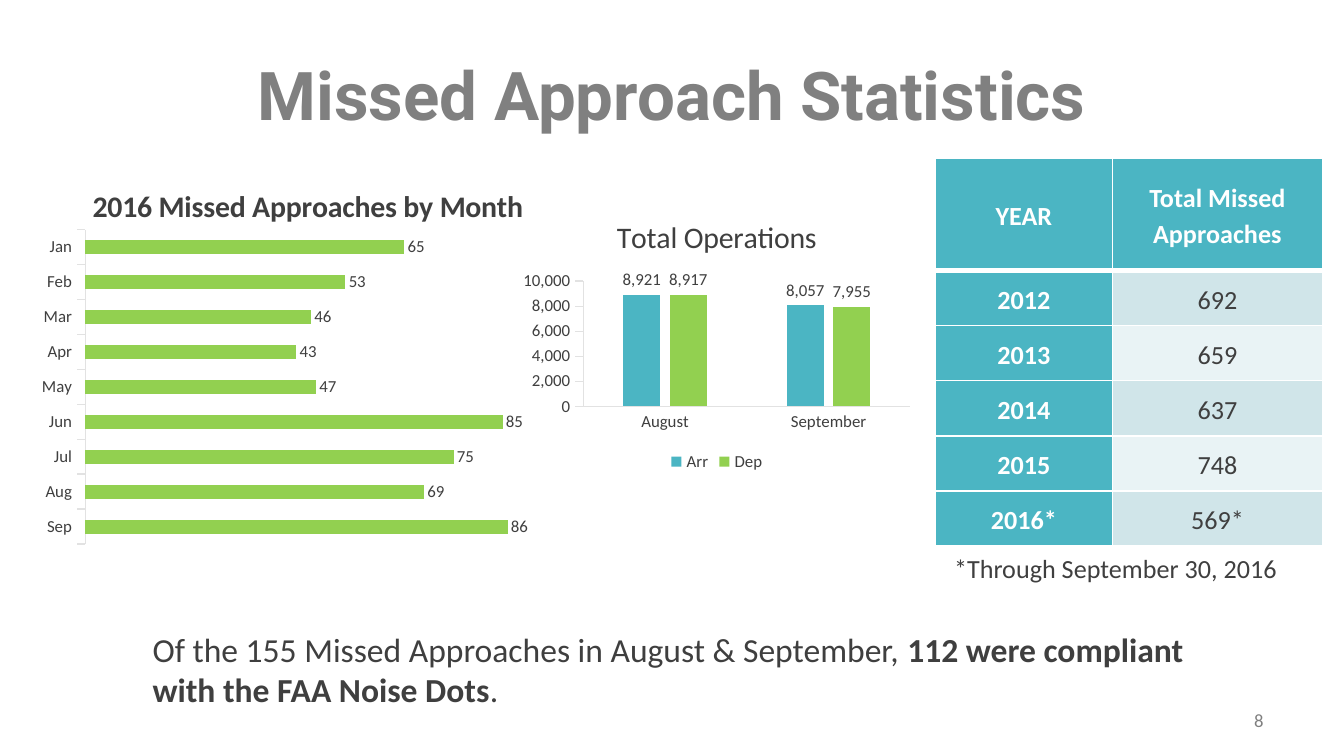
from lxml import etree
from pptx import Presentation
from pptx.chart.data import CategoryChartData
from pptx.dml.color import RGBColor
from pptx.enum import chart as ch, text as tx
from pptx.oxml import parse_xml
from pptx.oxml.ns import nsdecls, qn
from pptx.util import Pt

HUES = {
    "title": "808080", "text": "3F3F3F", "white": "FFFFFF", "teal": "4BB5C3",
    "green": "92D050", "band": "D0E5E9", "pale": "E9F3F5", "axis": "E2E2E2",
}
MONTHS = ["Sep", "Aug", "Jul", "Jun", "May", "Apr", "Mar", "Feb", "Jan"]
MISSED = [86, 69, 75, 85, 47, 43, 46, 53, 65]
TOTALS = [
    ("YEAR", "Total Missed Approaches"), ("2012", "692"), ("2013", "659"),
    ("2014", "637"), ("2015", "748"), ("2016*", "569*"),
]


def hue(name):
    return RGBColor.from_string(HUES[name])


def style(font, size, color="text", bold=False, face="Calibri"):
    font.size, font.bold, font.name = Pt(size), bold, face
    font.color.rgb = hue(color)


def place(shape, box):
    shape.left, shape.top, shape.width, shape.height = map(Pt, box)


def add_title(slide, words):
    title = slide.shapes.title
    place(title, (0, 16.5, 720, 67.5))
    frame = title.text_frame
    frame.text = words
    frame.vertical_anchor = tx.MSO_ANCHOR.MIDDLE
    para = frame.paragraphs[0]
    para.alignment = tx.PP_ALIGN.CENTER
    style(para.runs[0].font, 36, "title", True, "Roboto")


def add_note(slide, box, parts, size, color="text", align=tx.PP_ALIGN.LEFT):
    """Add a text box; parts are (words, bold) pairs of one paragraph."""
    frame = slide.shapes.add_textbox(*map(Pt, box)).text_frame
    frame.word_wrap = True
    para = frame.paragraphs[0]
    para.alignment = align
    for words, bold in parts:
        run = para.add_run()
        run.text = words
        style(run.font, size, color, bold)
    return frame


def set_layout(parent, spot, **values):
    """Give a chart part a manual layout as its child number spot."""
    for old in parent.findall(qn("c:layout")):
        parent.remove(old)
    layout = parse_xml(f"<c:layout {nsdecls('c')}><c:manualLayout/></c:layout>")
    for tag, value in values.items():
        etree.SubElement(layout[0], qn("c:" + tag), val=str(value))
    parent.insert(spot, layout)


def add_bars(slide, kind, box, title, bold, cats, series, gap, overlap):
    """Add a bar chart; series are (name, values, color) rows."""
    data = CategoryChartData(number_format="#,##0")
    data.categories = cats
    for name, values, _ in series:
        data.add_series(name, values)
    chart = slide.shapes.add_chart(kind, *map(Pt, box), data).chart
    style(chart.font, 9)
    chart.has_legend = False
    chart.has_title = True
    chart.chart_title.include_in_layout = False
    frame = chart.chart_title.text_frame
    frame.text = title
    style(frame.paragraphs[0].runs[0].font, 16, bold=bold)
    plot = chart.plots[0]
    plot.gap_width, plot.overlap, plot.vary_by_categories = gap, overlap, False
    for row, (_, _, color) in zip(plot.series, series):
        row.format.fill.solid()
        row.format.fill.fore_color.rgb = hue(color)
        row.data_labels.show_value = True
        style(row.data_labels.font, 9)
    for axis in (chart.category_axis, chart.value_axis):
        axis.has_major_gridlines = False
        axis.major_tick_mark = ch.XL_TICK_MARK.OUTSIDE
        axis.format.line.color.rgb = hue("axis")
        axis.format.line.width = Pt(0.75)
        style(axis.tick_labels.font, 9)
    chart.value_axis.minimum_scale = 0
    return chart


def add_months(slide):
    chart = add_bars(
        slide, ch.XL_CHART_TYPE.BAR_STACKED, (12, 88.5, 306, 216),
        "2016 Missed Approaches by Month", True, MONTHS,
        [("Series 1", MISSED, "green")], 150, 100)
    chart.value_axis.maximum_scale = 100
    chart.value_axis.visible = False
    row = chart.plots[0].series[0]
    for i in range(len(MISSED)):
        label = row.points[i].data_label
        label.position = ch.XL_LABEL_POSITION.INSIDE_END
        style(label.font, 9)
    # A stacked bar has no outside label position, so shift each label.
    area = chart.element.find(".//" + qn("c:plotArea"))
    for label in area.iter(qn("c:dLbl")):
        set_layout(label, 1, x=0.045, y=0)
    set_layout(area, 0, layoutTarget="inner", xMode="edge", yMode="edge",
               x=0.11, y=0.16, w=0.86, h=0.78)


def add_flights(slide):
    chart = add_bars(
        slide, ch.XL_CHART_TYPE.COLUMN_CLUSTERED, (276, 106.5, 216, 149),
        "Total Operations", False, ["August", "September"],
        [("Arr", [8921, 8057], "teal"), ("Dep", [8917, 7955], "green")], 219, -27)
    chart.category_axis.major_tick_mark = ch.XL_TICK_MARK.NONE
    chart.value_axis.tick_labels.number_format = "#,##0"
    chart.value_axis.tick_labels.number_format_is_linked = False
    chart.has_legend = True
    chart.legend.position = ch.XL_LEGEND_POSITION.BOTTOM
    chart.legend.include_in_layout = False
    style(chart.legend.font, 9)


def set_edges(cell, base):
    """Draw white cell borders, the bottom one base points wide."""
    props = cell._tc.get_or_add_tcPr()
    for i, (side, wide) in enumerate(zip("LRTB", (1, 1, 1, base))):
        props.insert(i, parse_xml(
            f'<a:ln{side} {nsdecls("a")} w="{Pt(wide)}"><a:solidFill>'
            f'<a:srgbClr val="{HUES["white"]}"/></a:solidFill></a:ln{side}>'))


def add_totals(slide):
    table = slide.shapes.add_table(
        len(TOTALS), 2, *map(Pt, (501, 84.5, 207.5, 208))).table
    for col, wide in zip(table.columns, (95, 112.5)):
        col.width = Pt(wide)
    for r, words in enumerate(TOTALS):
        table.rows[r].height = Pt(29.5 if r else 60.5)
        for c, word in enumerate(words):
            cell = table.cell(r, c)
            head = r == 0 or c == 0
            cell.fill.solid()
            cell.fill.fore_color.rgb = hue(
                "teal" if head else "band" if r % 2 else "pale")
            set_edges(cell, 1 if r else 3)
            cell.vertical_anchor = tx.MSO_ANCHOR.MIDDLE
            cell.margin_left = cell.margin_right = Pt(5)
            cell.margin_top = cell.margin_bottom = 0
            para = cell.text_frame.paragraphs[0]
            para.text = word
            para.alignment = tx.PP_ALIGN.CENTER
            para.line_spacing = 1.15
            style(para.runs[0].font, 14, "white" if head else "text", head)


def main():
    deck = Presentation()
    deck.slide_width, deck.slide_height = Pt(720), Pt(405)
    slide = deck.slides.add_slide(deck.slide_layouts[5])
    add_title(slide, "Missed Approach Statistics")
    page = add_note(slide, (516, 375, 168, 21.5), [("8", False)], 10, "title",
                    tx.PP_ALIGN.RIGHT)
    page.vertical_anchor = tx.MSO_ANCHOR.MIDDLE
    claim = add_note(slide, (78, 335, 572.5, 47.5), [
        ("Of the 155 Missed Approaches in August & September, ", False),
        ("112 were compliant with the FAA Noise Dots", True), (".", False)], 18)
    claim.margin_left = claim.margin_right = Pt(3.75)
    claim.margin_top = claim.margin_bottom = Pt(2)
    add_note(slide, (504, 292.5, 204, 24.5),
             [("*Through September 30, 2016", False)], 14)
    add_months(slide)
    add_totals(slide)
    add_flights(slide)
    deck.save("out.pptx")


if __name__ == "__main__":
    main()
